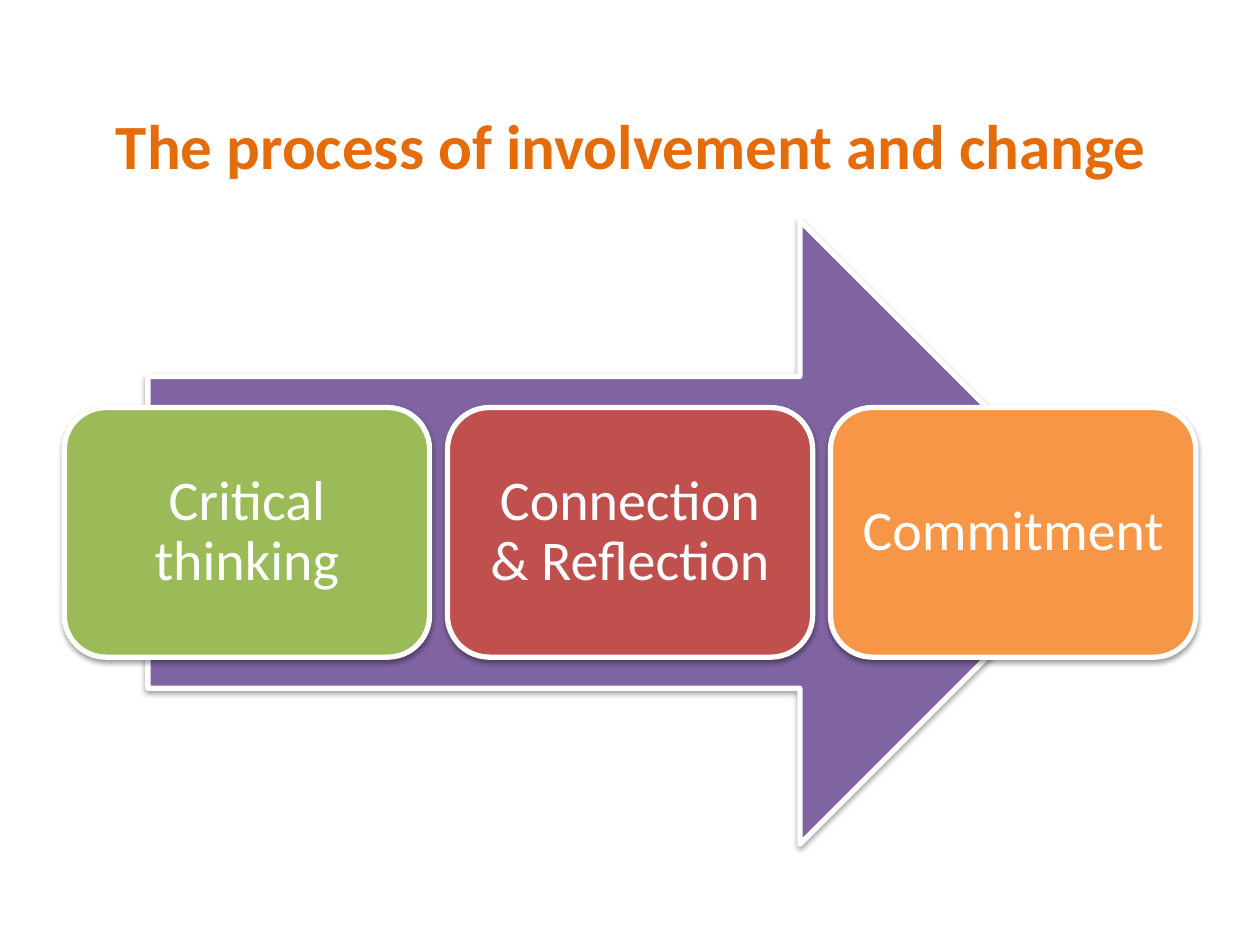
from lxml import etree
from pptx import Presentation
from pptx.dml.color import RGBColor
from pptx.enum.shapes import MSO_SHAPE
from pptx.enum.text import MSO_ANCHOR, PP_ALIGN
from pptx.oxml import parse_xml
from pptx.oxml.ns import nsdecls, qn
from pptx.util import Pt

ARROW = MSO_SHAPE.RIGHT_ARROW
ROUND = MSO_SHAPE.ROUNDED_RECTANGLE
MIDDLE = MSO_ANCHOR.MIDDLE
CENTER = PP_ALIGN.CENTER

WHITE = RGBColor(0xFF, 0xFF, 0xFF)
ORANGE = RGBColor(0xE4, 0x6C, 0x0A)
PURPLE = RGBColor(0x80, 0x64, 0xA2)
STEPS = [
    ("Critical thinking", RGBColor(0x9B, 0xBB, 0x59)),
    ("Connection & Reflection", RGBColor(0xC0, 0x50, 0x4D)),
    ("Commitment", RGBColor(0xF7, 0x96, 0x46)),
]
FONT = "Calibri"
SHADOW = (
    f'<a:outerShdw {nsdecls("a")} blurRad="{Pt(3.1)}" dist="{Pt(1.6)}" '
    'dir="5400000" rotWithShape="0"><a:srgbClr val="000000">'
    '<a:alpha val="38000"/></a:srgbClr></a:outerShdw>'
)


def add_block(kind, left, top, width, height, color):
    """Add a filled shape with a white outline and a soft shadow below."""
    block = slide.shapes.add_shape(kind, Pt(left), Pt(top), Pt(width), Pt(height))
    block.fill.solid()
    block.fill.fore_color.rgb = color
    block.line.color.rgb = WHITE
    block.line.width = Pt(3)
    block.shadow.inherit = False
    effects = block.element.spPr.find(qn("a:effectLst"))
    effects.append(parse_xml(SHADOW))
    return block


def add_text(frame, text, size, color, bold=False):
    frame.word_wrap = True
    frame.vertical_anchor = MIDDLE
    para = frame.paragraphs[0]
    para.alignment = CENTER
    run = para.add_run()
    run.text = text
    run.font.name = FONT
    run.font.size = Pt(size)
    run.font.bold = bold
    run.font.color.rgb = color
    return para


prs = Presentation()
prs.slide_width, prs.slide_height = Pt(720), Pt(540)
slide = prs.slides.add_slide(prs.slide_layouts[5])

title = slide.shapes.title
title.left, title.top = Pt(36.5), Pt(37.5)
title.width, title.height = Pt(648), Pt(90)
add_text(title.text_frame, "The process of involvement and change", 36, ORANGE, True)

add_block(ARROW, 84.5, 126, 550.8, 356.4, PURPLE)

step_width, gap = 208.7, 10.2
for i, (label, color) in enumerate(STEPS):
    left = 36.8 + i * (step_width + gap)
    step = add_block(ROUND, left, 232.9, step_width, 142.6, color)
    frame = step.text_frame
    frame.margin_left = frame.margin_right = Pt(9.6)
    frame.margin_top = frame.margin_bottom = Pt(9.6)
    para = add_text(frame, label, 32, WHITE)
    para.line_spacing = 0.9

prs.save("out.pptx")
